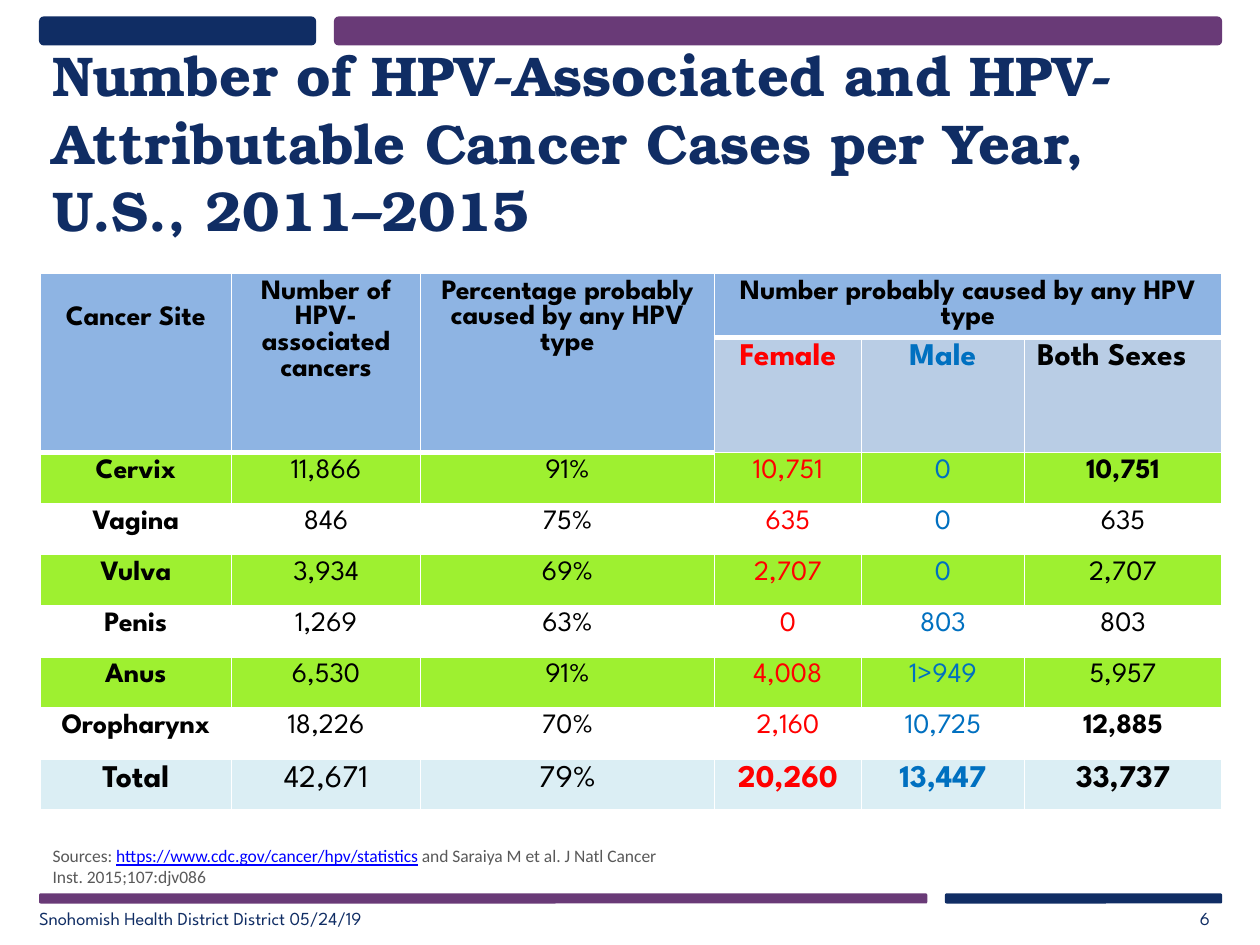
from lxml.etree import SubElement
from pptx import Presentation
from pptx.dml.color import RGBColor
from pptx.enum.shapes import MSO_SHAPE as Shape
from pptx.enum.text import MSO_ANCHOR as Anchor, PP_ALIGN as Align
from pptx.oxml import parse_xml
from pptx.oxml.ns import nsdecls, qn
from pptx.util import Pt

NAVY = RGBColor(0x10, 0x2D, 0x64)
PURPLE = RGBColor(0x69, 0x3A, 0x77)
BLACK = RGBColor(0, 0, 0)
WHITE = RGBColor(0xFF, 0xFF, 0xFF)
GREY = RGBColor(0x59, 0x59, 0x59)
LINK_BLUE = RGBColor(0, 0, 0xFF)
FEMALE_RED = RGBColor(0xFF, 0, 0)
MALE_BLUE = RGBColor(0, 0x70, 0xC0)
HEADER_BLUE = RGBColor(0x8E, 0xB4, 0xE3)
SUBHEADER_BLUE = RGBColor(0xB9, 0xCD, 0xE5)
LIME = RGBColor(0x9E, 0xF0, 0x30)
PALE_AQUA = RGBColor(0xDB, 0xEE, 0xF4)

SANS, SERIF, SMALL = "League Spartan", "TeX Gyre Bonum", "Calibri"

BARS = [  # left, top, width, height, colour
    (190.8, 9.4, 507.6, 16.6, PURPLE),
    (22.3, 9.4, 158.4, 16.6, NAVY),
    (22.3, 510.5, 507.6, 5.8, PURPLE),
    (540, 510.5, 158.4, 5.8, NAVY),
]
TITLE = ("Number of HPV-Associated and HPV-Attributable Cancer Cases "
         "per Year, U.S., 2011–2015")
FOOTER = "Snohomish Health District District 05/24/19"
SOURCES = [
    ("Sources: ", {"color": GREY}),
    ("https://www.cdc.gov/cancer/hpv/statistics",
     {"color": LINK_BLUE, "underline": True}),
    (" and Saraiya M et al. J Natl Cancer Inst. 2015;107:djv086",
     {"color": GREY}),
]
HEADINGS = ["Cancer Site", "Number of HPV-associated cancers",
            "Percentage probably caused by any HPV type",
            "Number probably caused by any HPV type"]
SEXES = ["Female", "Male", "Both Sexes"]
CASES = [
    ("Cervix", "11,866", "91%", "10,751", "0", "10,751"),
    ("Vagina", "846", "75%", "635", "0", "635"),
    ("Vulva", "3,934", "69%", "2,707", "0", "2,707"),
    ("Penis", "1,269", "63%", "0", "803", "803"),
    ("Anus", "6,530", "91%", "4,008", "1>949", "5,957"),
    ("Oropharynx", "18,226", "70%", "2,160", "10,725", "12,885"),
    ("Total", "42,671", "79%", "20,260", "13,447", "33,737"),
]
BOLD_TOTALS = {"Cervix", "Oropharynx", "Total"}
COLUMN_COLORS = [BLACK, BLACK, BLACK, FEMALE_RED, MALE_BLUE, BLACK]
COLUMN_WIDTHS = [109.3, 108.1, 167.9, 84, 93.2, 112.6]
ROW_HEIGHTS = [33.8, 38.2] + [29.2] * len(CASES)


def write(paragraph, spans, align=Align.LEFT, **common):
    paragraph.alignment = align
    for text, own in spans:
        span = paragraph.add_run()
        span.text = text
        for name, value in {**common, **own}.items():
            if name == "color":
                span.font.color.rgb = value
            else:
                setattr(span.font, name, value)


def add_text(page, place, spans, anchor=Anchor.TOP, align=Align.LEFT,
             side_margin=7.2, **common):
    box = page.shapes.add_textbox(*map(Pt, place))
    frame = box.text_frame
    frame.word_wrap = True
    frame.vertical_anchor = anchor
    frame.margin_left = frame.margin_right = Pt(side_margin)
    write(frame.paragraphs[0], spans, align, **common)


def set_borders(cell, bottom):
    """Draw white borders, 1 pt wide except the bottom one."""
    properties = cell._tc.get_or_add_tcPr()
    for index, (side, width) in enumerate(
            [("L", 1), ("R", 1), ("T", 1), ("B", bottom)]):
        line = parse_xml(f'<a:ln{side} {nsdecls("a")} w="{Pt(width)}"/>')
        fill = SubElement(line, qn("a:solidFill"))
        SubElement(fill, qn("a:srgbClr")).set("val", str(WHITE))
        properties.insert(index, line)


def fill_cell(cell, text, fill, bottom=1, align=Align.CENTER, **font):
    cell.fill.solid()
    cell.fill.fore_color.rgb = fill
    set_borders(cell, bottom)
    if text:
        write(cell.text_frame.paragraphs[0], [(text, font)], align, name=SANS)


def add_case_table(page):
    frame = page.shapes.add_table(
        len(ROW_HEIGHTS), len(COLUMN_WIDTHS), Pt(23), Pt(156.2),
        Pt(sum(COLUMN_WIDTHS)), Pt(sum(ROW_HEIGHTS)))
    table = frame.table
    table.first_row = table.horz_banding = False
    for column, width in zip(table.columns, COLUMN_WIDTHS):
        column.width = Pt(width)
    for row, height in zip(table.rows, ROW_HEIGHTS):
        row.height = Pt(height)

    for c in range(3):
        table.cell(0, c).merge(table.cell(1, c))
        fill_cell(table.cell(1, c), "", HEADER_BLUE, bottom=3)
    table.cell(0, 3).merge(table.cell(0, 5))
    for c in range(6):
        text = HEADINGS[c] if c < len(HEADINGS) else ""
        fill_cell(table.cell(0, c), text, HEADER_BLUE, bottom=3,
                  size=Pt(16), bold=True, color=BLACK)
    table.cell(0, 0).margin_top = Pt(18.5)

    for c, sex in enumerate(SEXES, start=3):
        align = Align.LEFT if sex == "Both Sexes" else Align.CENTER
        fill_cell(table.cell(1, c), sex, SUBHEADER_BLUE, align=align,
                  size=Pt(18), bold=True, color=COLUMN_COLORS[c])

    for r, values in enumerate(CASES):
        site = values[0]
        is_total = site == "Total"
        fill = PALE_AQUA if is_total else (LIME, WHITE)[r % 2]
        for c, value in enumerate(values):
            bold = (c == 0 or (is_total and c >= 3)
                    or (c == 5 and site in BOLD_TOTALS))
            fill_cell(table.cell(r + 2, c), value, fill,
                      size=Pt(18 if is_total else 16), bold=bold,
                      color=COLUMN_COLORS[c])


def main():
    deck = Presentation()
    deck.slide_width, deck.slide_height = Pt(720), Pt(540)
    page = deck.slides.add_slide(deck.slide_layouts[6])

    for left, top, width, height, color in BARS:
        bar = page.shapes.add_shape(Shape.ROUNDED_RECTANGLE, Pt(left), Pt(top),
                                    Pt(width), Pt(height))
        bar.shadow.inherit = False
        bar.fill.solid()
        bar.fill.fore_color.rgb = color
        bar.line.fill.background()

    add_case_table(page)
    small = {"name": SANS, "size": Pt(10.5), "color": NAVY}
    add_text(page, (22.3, 510.5, 288.7, 28.8), [(FOOTER, small)],
             Anchor.MIDDLE, side_margin=0)
    add_text(page, (668.2, 510.5, 30.2, 28.8), [("6", small)],
             Anchor.MIDDLE, Align.RIGHT)
    add_text(page, (23, 30.2, 675.4, 101.5), [(TITLE, {})], Anchor.MIDDLE,
             name=SERIF, size=Pt(32), bold=True, color=NAVY)
    add_text(page, (23, 479.5, 360, 31.7), SOURCES, name=SMALL, size=Pt(10))
    deck.save("out.pptx")


if __name__ == "__main__":
    main()
